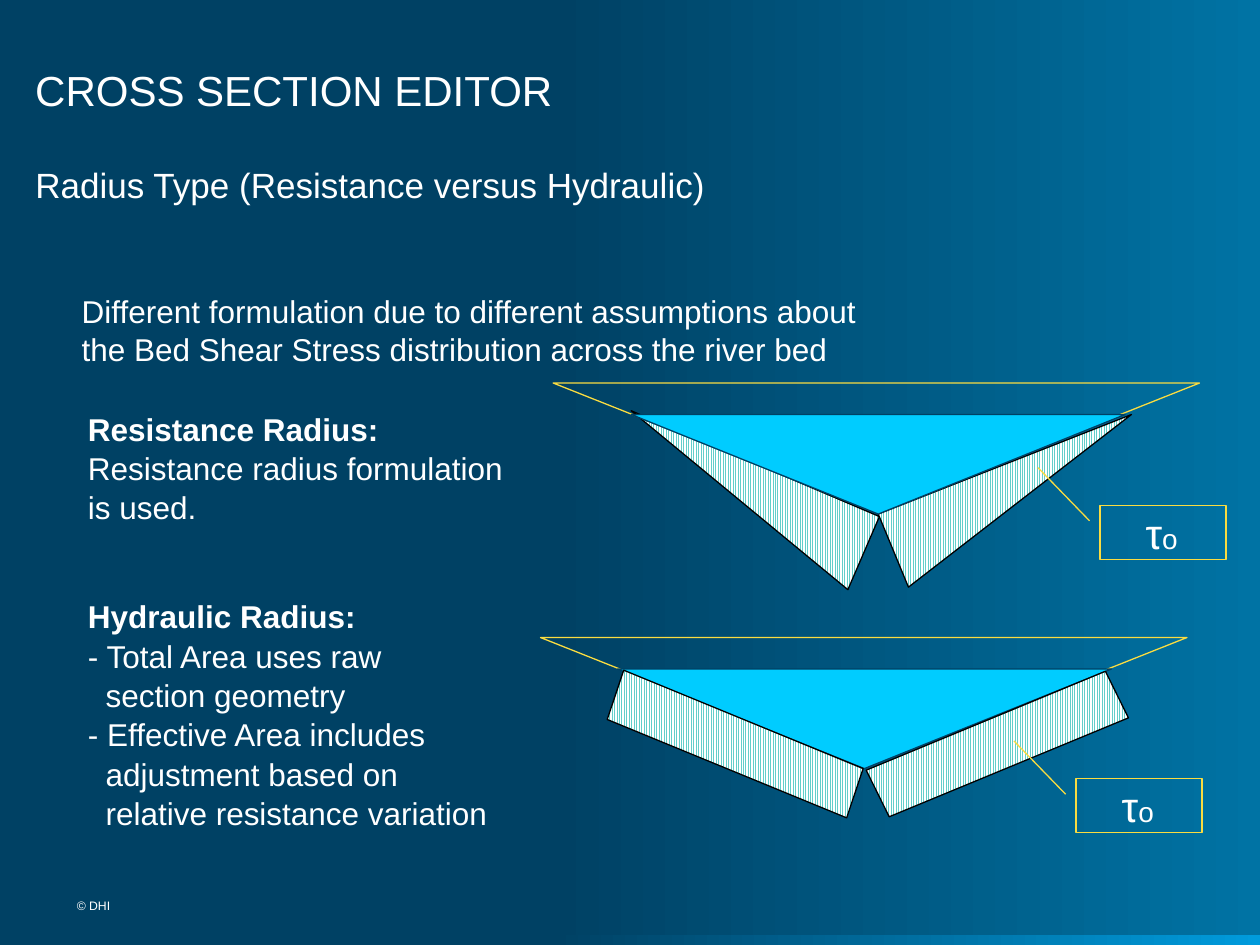
from lxml import etree
from pptx import Presentation
from pptx.dml.color import RGBColor
from pptx.enum.dml import MSO_PATTERN
from pptx.enum.shapes import MSO_SHAPE
from pptx.enum.text import MSO_ANCHOR, PP_ALIGN
from pptx.util import Inches, Pt

TRIANGLE = MSO_SHAPE.ISOSCELES_TRIANGLE
PARALLELOGRAM = MSO_SHAPE.PARALLELOGRAM
CALLOUT = MSO_SHAPE.LINE_CALLOUT_1
BAR = MSO_SHAPE.RECTANGLE
VERTICAL_LINES = MSO_PATTERN.LIGHT_VERTICAL
BOTTOM, CENTER = MSO_ANCHOR.BOTTOM, PP_ALIGN.CENTER

NAVY, BLUE, LIGHT_BLUE = "004164", "0073A4", "009BDC"
WATER, WATER_EDGE, TEAL = "00CCFF", "004165", "63CECA"
YELLOW, WHITE, BLACK = "FADC41", "FFFFFF", "000000"
NO_INSETS = (0, 0, 0, 0)
TEXT_INSETS = (0.1, 0.05, 0.1, 0.05)


def color(value):
    return RGBColor.from_string(value)


def apply(target, values):
    for name, value in values.items():
        setattr(target, name, value)


class SlideBuilder:
    """Holds the text style and the current slide."""

    font = {"name": "Arial", "size": Pt(18), "bold": False}

    def __init__(self, page):
        self.page = page

    def gradient(self, fill, end):
        fill.gradient()
        fill.gradient_angle = 0
        for stop, place, value in zip(fill.gradient_stops, (0.44, 1), (NAVY, end)):
            stop.position = place
            stop.color.rgb = color(value)

    def finish(self, shape, line, fill=None, hatched=False):
        shape.shadow.inherit = False
        if hatched:
            shape.fill.patterned()
            shape.fill.pattern = VERTICAL_LINES
            shape.fill.fore_color.rgb = color(TEAL)
            shape.fill.back_color.rgb = color(WHITE)
        elif fill:
            shape.fill.solid()
            shape.fill.fore_color.rgb = color(fill)
        else:
            shape.fill.background()
        shape.line.color.rgb = color(line)
        shape.line.width = Pt(0.75)

    def shape(self, kind, place, line, rotation=0, adjust=(), **style):
        shape = self.page.shapes.add_shape(kind, *map(Inches, place))
        shape.rotation = rotation
        for index, value in enumerate(adjust):
            shape.adjustments[index] = value
        self.finish(shape, line, **style)
        return shape

    def bar(self, place):
        bar = self.page.shapes.add_shape(BAR, *map(Inches, place))
        bar.shadow.inherit = False
        self.gradient(bar.fill, LIGHT_BLUE)
        bar.line.fill.background()

    def polygon(self, points):
        start, *others = [(Inches(x), Inches(y)) for x, y in points]
        builder = self.page.shapes.build_freeform(*start)
        builder.add_line_segments(others, close=True)
        self.finish(builder.convert_to_shape(), BLACK, hatched=True)

    def span(self, para, text, **style):
        span = para.add_run()
        span.text = text
        apply(span.font, {**self.font, **style})
        span.font.color.rgb = color(WHITE)

    def frame(self, box, insets, **layout):
        sides = ("margin_left", "margin_top", "margin_right", "margin_bottom")
        frame = box.text_frame
        apply(frame, {"word_wrap": True, **layout})
        apply(frame, dict(zip(sides, map(Inches, insets))))
        return frame

    def text(self, place, paragraphs, insets=TEXT_INSETS, **layout):
        box = self.page.shapes.add_textbox(*map(Inches, place))
        frame = self.frame(box, insets, **layout)
        for index, (lines, style, spacing) in enumerate(paragraphs):
            para = frame.add_paragraph() if index else frame.paragraphs[0]
            apply(para, spacing)
            for number, line in enumerate(lines.split("\n")):
                if number:
                    para.add_line_break()
                self.span(para, line, **style)
        return frame

    def hang(self, para, width):
        properties = para._p.get_or_add_pPr()
        properties.set("marL", str(Inches(width)))
        properties.set("indent", str(-Inches(width)))
        etree.SubElement(properties, f"{{{properties.nsmap['a']}}}buNone")

    def stress_label(self, left, top):
        box = self.shape(CALLOUT, (left, top, 1, 0.43), YELLOW,
                         adjust=(0.288, -0.083, -0.696, -0.493))
        para = self.frame(box, (0.02, 0.01, 0.04, 0.01)).paragraphs[0]
        para.alignment = CENTER
        self.span(para, "τ", size=Pt(24))
        self.span(para, "o", size=Pt(16))

    def channel(self, bank, water):
        self.shape(TRIANGLE, (*bank, 5.13, 1.02), YELLOW, 180)
        self.shape(TRIANGLE, (*water, 3.92, 0.79), WATER_EDGE, 180, fill=WATER)


def main():
    deck = Presentation()
    deck.slide_width, deck.slide_height = Inches(10), Inches(7.5)
    page = deck.slides.add_slide(deck.slide_layouts[6])
    slide = SlideBuilder(page)

    # Background and bottom bar
    slide.gradient(page.background.fill, BLUE)
    slide.bar((0, 7.42, 10, 0.08))

    # Headings and introduction
    slide.text((0.28, 0.25, 8.6, 0.66),
               [("CROSS SECTION EDITOR", {"size": Pt(24)}, {})],
               NO_INSETS, vertical_anchor=BOTTOM)
    slide.text((0.28, 1.3, 9.45, 5.6),
               [("Radius Type (Resistance versus Hydraulic)", {"size": Pt(20)}, {})],
               NO_INSETS)
    slide.text((0.55, 2.27, 9.23, 0.7), [
        ("Different formulation due to different assumptions about", {}, {}),
        ("the Bed Shear Stress distribution across the river bed", {}, {}),
    ])

    # Radius definitions
    spacing = {"line_spacing": 1.04}
    definitions = slide.text((0.6, 3.19, 3.53, 3.43), [
        ("Resistance Radius:", {"bold": True}, spacing),
        ("Resistance radius formulation is used.", {}, spacing),
        ("Hydraulic Radius:", {"bold": True}, {**spacing, "space_before": Pt(40)}),
        ("- Total Area uses raw\nsection geometry", {}, spacing),
        ("- Effective Area includes\nadjustment based on\n"
         "relative resistance variation", {}, spacing),
    ])
    for para in definitions.paragraphs[-2:]:
        slide.hang(para, 0.14)

    # Resistance radius: stress grows with depth
    slide.polygon([(5.01, 3.26), (6.98, 4.1), (6.73, 4.68)])
    slide.polygon([(8.98, 3.29), (6.97, 4.08), (7.21, 4.66)])
    slide.channel((4.39, 3.04), (5.01, 3.29))
    slide.stress_label(8.73, 4.01)

    # Hydraulic radius: stress is uniform along the bed
    slide.channel((4.29, 5.06), (4.9, 5.31))
    for left, rotation in ((5.56, 288.5), (7.64, 63.7)):
        slide.shape(PARALLELOGRAM, (left, 4.88, 0.55, 2.05), BLACK, rotation,
                    adjust=(0.25,), hatched=True)
    slide.stress_label(8.54, 6.18)

    # Footer
    slide.text((0.61, 7.13, 1.55, 0.19), [("© DHI", {"size": Pt(7)}, {})], NO_INSETS)

    deck.save("out.pptx")


if __name__ == "__main__":
    main()
